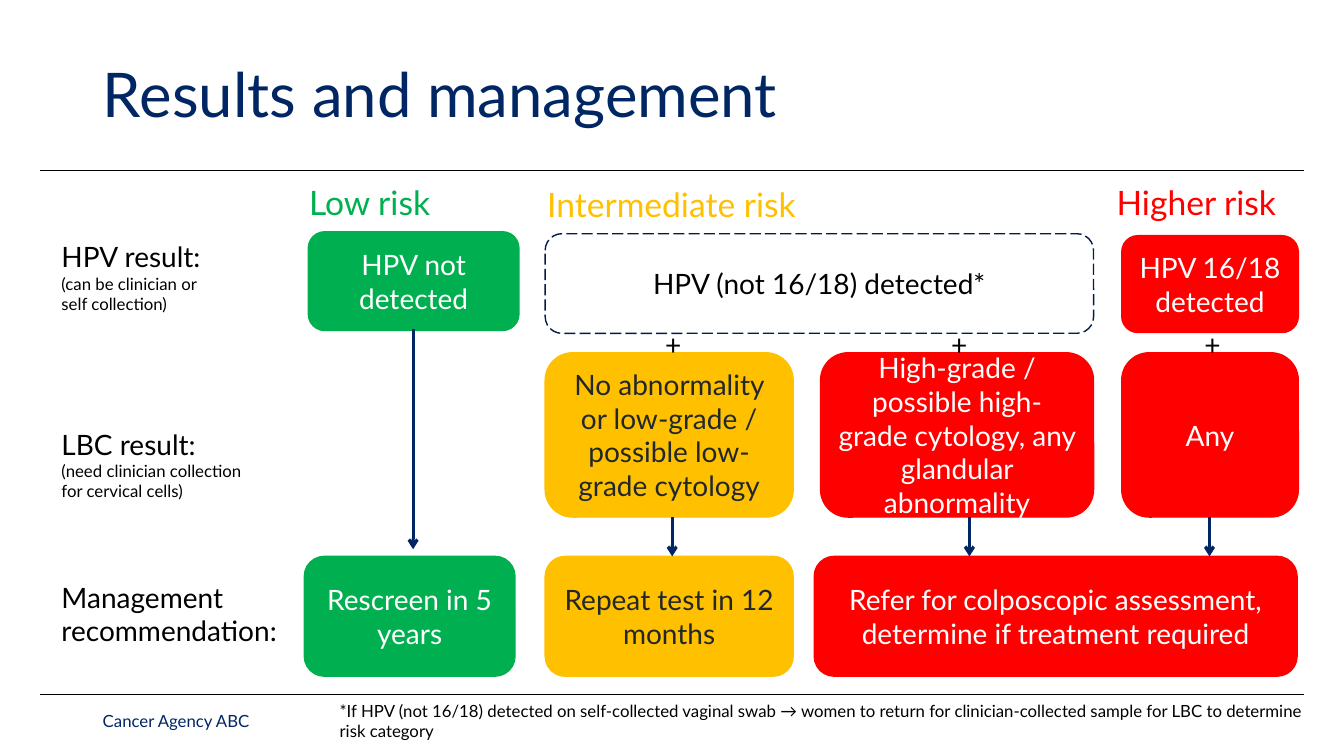
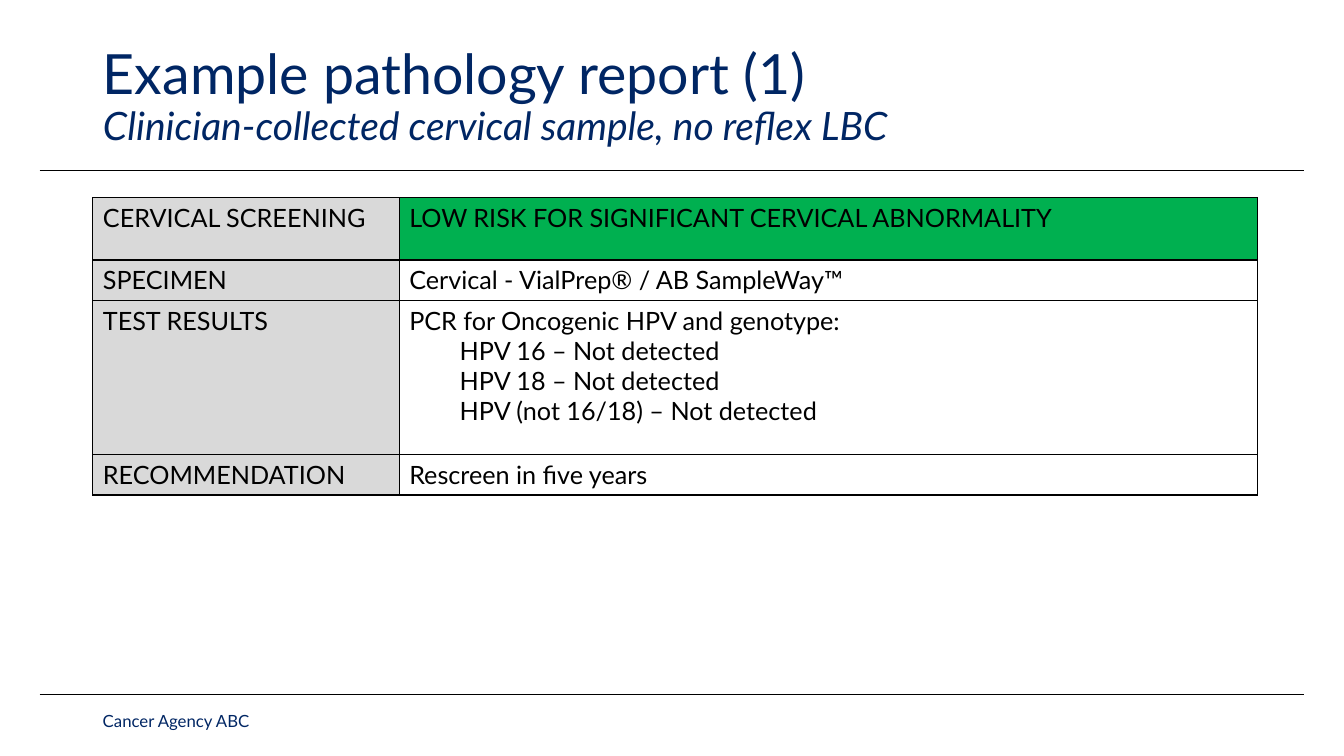
"""Build two slides on cervical screening results and an example report."""
from lxml import etree
from pptx import Presentation
from pptx.dml.color import RGBColor
from pptx.enum import dml, shapes, text
from pptx.oxml import ns
from pptx.util import Cm, Pt

NAVY = RGBColor(0x00, 0x26, 0x64)
DASH_NAVY = RGBColor(0x00, 0x1C, 0x4A)
GREEN = RGBColor(0x00, 0xB0, 0x50)
AMBER = RGBColor(0xFF, 0xC0, 0x00)
RED = RGBColor(0xFF, 0x00, 0x00)
GREY = RGBColor(0xD9, 0xD9, 0xD9)
CHARCOAL = RGBColor(0x22, 0x27, 0x2B)
BLACK = RGBColor(0x00, 0x00, 0x00)
WHITE = RGBColor(0xFF, 0xFF, 0xFF)

FONT = "Lato"
MIDDLE = text.MSO_ANCHOR.MIDDLE
CENTER = text.PP_ALIGN.CENTER


class Deck:
    def __init__(self):
        self.deck = Presentation()
        self.deck.slide_width = Cm(33.87)
        self.deck.slide_height = Cm(19.05)
        self.page = None

    def add_page(self, *title_lines):
        self.page = self.deck.slides.add_slide(self.deck.slide_layouts[5])
        for y in (4.3, 17.5):
            self.line(1, y, 32.87, y, BLACK, 0.5)
        self.label(2.34, 17.65, 11.43, 1.02, [("Cancer Agency ABC", 12)], NAVY, MIDDLE)
        title = self.page.shapes.title
        title.left, title.top = Cm(2.34), Cm(1.07)
        title.width, title.height = Cm(27), Cm(2.8)
        frame = title.text_frame
        frame.auto_size = text.MSO_AUTO_SIZE.NONE
        frame.vertical_anchor = MIDDLE
        para = frame.paragraphs[0]
        para.alignment = text.PP_ALIGN.LEFT
        para.line_spacing = 0.9
        for index, (words, size, italic) in enumerate(title_lines):
            if index:
                para.add_line_break()
            self.span(para, words, size, NAVY).font.italic = italic

    def span(self, para, words, size, color):
        span = para.add_run()
        span.text = words
        span.font.name = FONT
        span.font.size = Pt(size)
        span.font.color.rgb = color
        return span

    def fill_text(self, frame, lines, color, align=None):
        for index, (words, size) in enumerate(lines):
            para = frame.add_paragraph() if index else frame.paragraphs[0]
            para.alignment = align
            self.span(para, words, size, color)

    def label(self, x, y, width, height, lines, color=BLACK, anchor=text.MSO_ANCHOR.TOP):
        box = self.page.shapes.add_textbox(Cm(x), Cm(y), Cm(width), Cm(height))
        box.text_frame.word_wrap = True
        box.text_frame.vertical_anchor = anchor
        self.fill_text(box.text_frame, lines, color)

    def card(self, x, y, width, height, words, fill, color=WHITE):
        box = self.page.shapes.add_shape(
            shapes.MSO_SHAPE.ROUNDED_RECTANGLE, Cm(x), Cm(y), Cm(width), Cm(height))
        box.shadow.inherit = False
        box.line.width = Pt(1)
        if fill is None:
            box.fill.background()
            box.line.color.rgb = DASH_NAVY
            box.line.dash_style = dml.MSO_LINE.LONG_DASH
        else:
            box.fill.solid()
            box.fill.fore_color.rgb = fill
            box.line.color.rgb = fill
        box.text_frame.word_wrap = True
        box.text_frame.vertical_anchor = MIDDLE
        self.fill_text(box.text_frame, [(words, 20)], color, CENTER)

    def line(self, x1, y1, x2, y2, color, width, arrow=False):
        line = self.page.shapes.add_connector(
            shapes.MSO_CONNECTOR.STRAIGHT, Cm(x1), Cm(y1), Cm(x2), Cm(y2))
        line.line.color.rgb = color
        line.line.width = Pt(width)
        properties = line._element.spPr
        if arrow:
            outline = properties.find(ns.qn("a:ln"))
            etree.SubElement(outline, ns.qn("a:tailEnd"), type="arrow")
        etree.SubElement(properties, ns.qn("a:effectLst"))

    def cell(self, cell, lines, fill):
        properties = cell._tc.get_or_add_tcPr()
        for side in ("a:lnL", "a:lnR", "a:lnT", "a:lnB"):
            border = etree.SubElement(properties, ns.qn(side), w=str(Pt(1)))
            paint = etree.SubElement(border, ns.qn("a:solidFill"))
            etree.SubElement(paint, ns.qn("a:srgbClr"), val=str(BLACK))
        if fill is None:
            cell.fill.background()
        else:
            cell.fill.solid()
            cell.fill.fore_color.rgb = fill
        self.fill_text(cell.text_frame, [(words, 18) for words in lines], BLACK)
        for para in cell.text_frame.paragraphs[1:]:
            para.level = 1
            para._p.get_or_add_pPr().set("marL", str(Cm(1.27)))

    def table(self, x, y, widths, heights, rows):
        table = self.page.shapes.add_table(
            len(heights), len(widths), Cm(x), Cm(y),
            Cm(sum(widths)), Cm(sum(heights))).table
        table.first_row = table.horz_banding = False
        for column, width in zip(table.columns, widths):
            column.width = Cm(width)
        for row, height, (heading, lines, fill) in zip(table.rows, heights, rows):
            row.height = Cm(height)
            self.cell(row.cells[0], [heading], GREY)
            self.cell(row.cells[1], lines, fill)


def build_management(deck):
    deck.add_page(("Results and management", 44, False))

    for x, y, width, words, color in (
        (7.54, 4.45, 4.47, "Low risk", GREEN),
        (13.54, 4.5, 7.57, "Intermediate risk", AMBER),
        (27.89, 4.47, 5.31, "Higher risk", RED),
    ):
        deck.label(x, y, width, 1.27, [(words, 24)], color)

    for y, width, lines in (
        (5.92, 4.6, [("HPV result:", 20), ("(can be clinician or self collection)", 12)]),
        (10.64, 5.54, [("LBC result:", 20),
                       ("(need clinician collection for cervical cells)", 12)]),
        (14.5, 6.25, [("Management recommendation:", 20)]),
    ):
        deck.label(1.3, y, width, 2.13, lines)

    deck.card(7.77, 5.84, 5.31, 2.49, "HPV not detected", GREEN)
    deck.card(13.74, 5.89, 13.82, 2.51, "HPV (not 16/18) detected*", None, BLACK)
    deck.card(28.27, 5.94, 4.45, 2.44, "HPV 16/18 detected", RED)

    lbc_row = (
        (13.74, 6.25, "No abnormality or low-grade / possible low-grade cytology",
         AMBER, CHARCOAL),
        (20.68, 6.88,
         "High-grade / possible high-grade cytology, any glandular abnormality",
         RED, WHITE),
        (28.27, 4.45, "Any", RED, WHITE),
    )
    advice_row = (
        (7.67, 5.31, "Rescreen in 5 years", GREEN, WHITE),
        (13.74, 6.25, "Repeat test in 12 months", AMBER, CHARCOAL),
        (20.52, 12.17, "Refer for colposcopic assessment, determine if treatment required",
         RED, WHITE),
    )
    for y, height, cards in ((8.89, 4.14, lbc_row), (14.02, 3.02, advice_row)):
        for x, width, words, fill, color in cards:
            deck.card(x, y, width, height, words, fill, color)

    for x in (16.51, 23.72, 30.1):
        deck.label(x, 8.13, 0.81, 1.12, [("+", 20)])

    deck.line(10.41, 8.28, 10.41, 13.84, NAVY, 2.25, True)
    for x in (16.94, 24.43, 30.48):
        deck.line(x, 13.03, x, 14.02, NAVY, 2.25, True)

    footnote = ("*If HPV (not 16/18) detected on self-collected vaginal swab → women to return "
                "for clinician-collected sample for LBC to determine risk category")
    deck.label(8.31, 17.53, 25.27, 1.27, [(footnote, 12)])


def build_report(deck):
    deck.add_page(("Example pathology report (1)", 39.6, False),
                  ("Clinician-collected cervical sample, no reflex LBC", 27.9, True))
    deck.table(2.34, 4.98, (7.72, 21.64), (1.57, 0.91, 3.89, 0.91), (
        ("CERVICAL SCREENING", ["LOW RISK FOR SIGNIFICANT CERVICAL ABNORMALITY"], GREEN),
        ("SPECIMEN", ["Cervical - VialPrep® / AB SampleWay™"], None),
        ("TEST RESULTS", ["PCR for Oncogenic HPV and genotype:",
                          "HPV 16 – Not detected",
                          "HPV 18 – Not detected",
                          "HPV (not 16/18) – Not detected"], None),
        ("RECOMMENDATION", ["Rescreen in five years"], None),
    ))


def main():
    deck = Deck()
    build_management(deck)
    build_report(deck)
    deck.deck.save("out.pptx")


if __name__ == "__main__":
    main()
